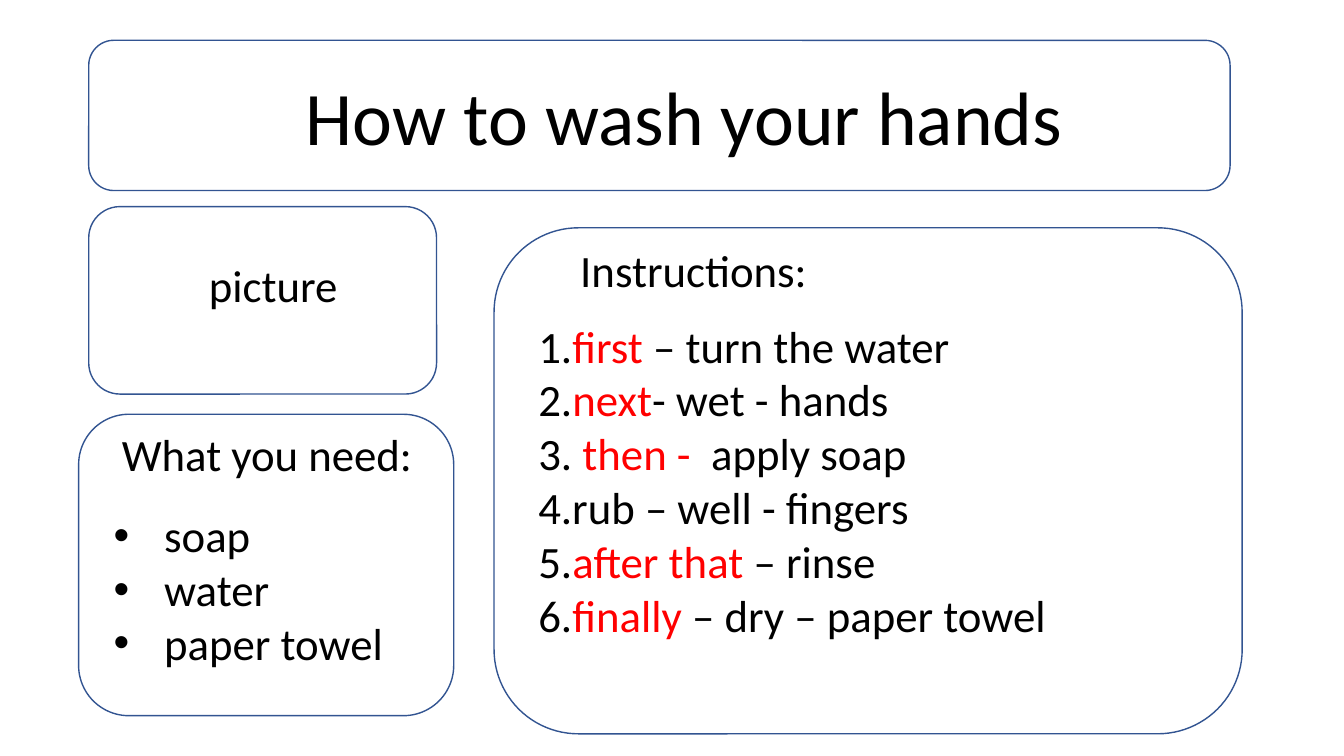
from dataclasses import dataclass

from lxml.etree import SubElement
from pptx import Presentation
from pptx.dml.color import RGBColor
from pptx.enum.shapes import MSO_SHAPE
from pptx.enum.text import MSO_AUTO_SIZE, PP_ALIGN
from pptx.oxml.ns import qn
from pptx.util import Pt

PX = 9144  # 100 px to the inch


@dataclass(frozen=True)
class Theme:
    font: str = "Calibri"
    ink: RGBColor = RGBColor(0, 0, 0)
    key: RGBColor = RGBColor(255, 0, 0)
    edge: RGBColor = RGBColor(0x32, 0x54, 0x91)
    paper: RGBColor = RGBColor(255, 255, 255)
    title: int = 54
    body: int = 32
    line: int = 1


def apply(target, values):
    for name, value in values.items():
        setattr(target, name, value)


class Board:
    def __init__(self, deck, theme):
        self.theme = theme
        self.slide = deck.slides.add_slide(deck.slide_layouts[6])

    def panel(self, box, solid=True):
        shape = self.slide.shapes.add_shape(
            MSO_SHAPE.ROUNDED_RECTANGLE, *(n * PX for n in box))
        shape.shadow.inherit = False
        if solid:
            shape.fill.solid()
            shape.fill.fore_color.rgb = self.theme.paper
        else:
            shape.fill.background()
        shape.line.color.rgb = self.theme.edge
        shape.line.width = Pt(self.theme.line)

    def text(self, box, rows, size, wrap=False, align=PP_ALIGN.LEFT):
        """Each row is a list of parts; every second part is a key word."""
        frame = self.slide.shapes.add_textbox(*(n * PX for n in box)).text_frame
        apply(frame, {"word_wrap": wrap,
                      "auto_size": MSO_AUTO_SIZE.SHAPE_TO_FIT_TEXT})
        for i, row in enumerate(rows):
            para = frame.add_paragraph() if i else frame.paragraphs[0]
            para.alignment = align
            for j, part in enumerate(row):
                run = para.add_run()
                run.text = part
                apply(run.font, {"name": self.theme.font, "size": Pt(size)})
                run.font.color.rgb = self.theme.key if j % 2 else self.theme.ink
        return frame

    def label(self, box, words, size):
        self.text(box, [[words]], size, align=PP_ALIGN.CENTER)

    def bullets(self, box, items, size):
        frame = self.text(box, [[item] for item in items], size)
        for para in frame.paragraphs:
            props = para._p.get_or_add_pPr()
            props.set("marL", str(50 * PX))
            props.set("indent", str(-50 * PX))
            SubElement(props, qn("a:buFont"), typeface="Arial")
            SubElement(props, qn("a:buChar"), char="•")


def main():
    deck = Presentation()
    apply(deck, {"slide_width": 1333 * PX, "slide_height": 750 * PX})
    theme = Theme()
    board = Board(deck, theme)

    # Panels
    board.panel((88, 40, 1132, 149))
    board.panel((78, 411, 372, 299))
    board.panel((490, 226, 742, 502))

    # Headings
    board.label((241, 64, 875, 101), "How to wash your hands", theme.title)
    board.label((91, 418, 348, 64), "What you need:", theme.body)
    board.label((542, 236, 292, 64), "Instructions:", theme.body)

    # Steps
    steps = [
        ["1.", "first", " – turn the water"],
        ["2.", "next", "- wet - hands"],
        ["3. ", "then - ", " apply soap"],
        ["4.rub – well - fingers"],
        ["5.", "after that ", "– rinse"],
        ["6.", "finally", " – dry – paper towel"],
    ]
    board.text((524, 311, 622, 333), steps, theme.body, wrap=True)

    # Picture frame
    board.panel((88, 205, 345, 186), solid=False)
    board.label((187, 251, 168, 64), "picture", theme.body)

    # Things needed
    board.bullets((103, 499, 316, 172), ["soap", "water", "paper towel"],
                  theme.body)

    deck.save("out.pptx")


if __name__ == "__main__":
    main()
